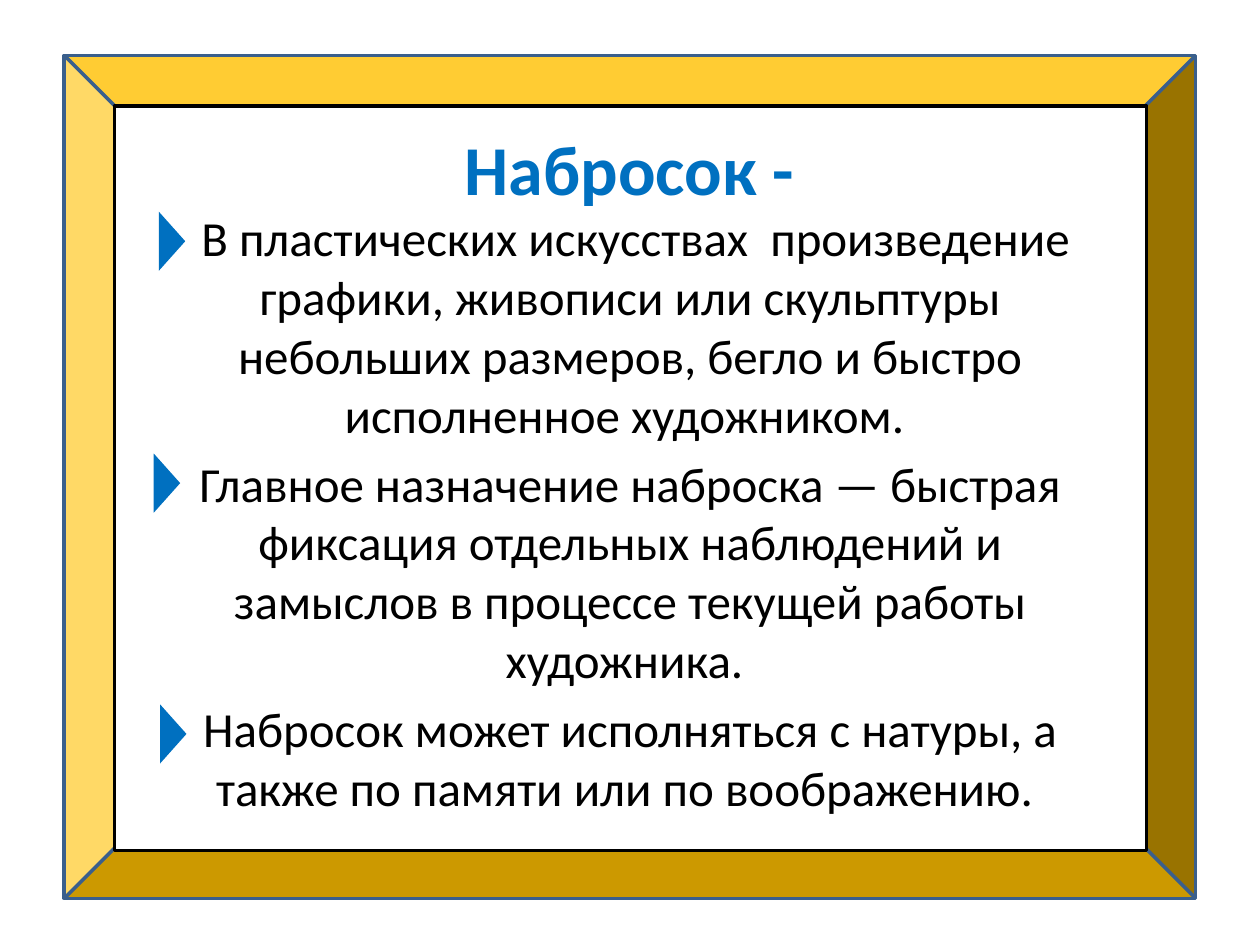
from dataclasses import dataclass

from pptx import Presentation
from pptx.dml.color import RGBColor as Rgb
from pptx.enum.shapes import MSO_SHAPE as Form
from pptx.enum.text import MSO_AUTO_SIZE as Fit, PP_ALIGN as Align
from pptx.util import Inches, Pt


@dataclass(frozen=True)
class Theme:
    font: str = "Calibri"
    gold: str = "FFC000"
    edge: str = "3A5F8C"
    paper: str = "FFFFFF"
    ink: str = "000000"
    blue: str = "0070C0"
    head: int = 40
    body: int = 28
    rule: int = 2


THEME = Theme()
WIDE, HIGH = Inches(10), Inches(7.5)
TITLE = "Набросок -"
POINTS = (
    " В пластических искусствах  произведение графики, живописи или скульптуры "
    "небольших размеров, бегло и быстро исполненное художником. ",
    "Главное назначение наброска — быстрая фиксация отдельных наблюдений и "
    "замыслов в процессе текущей работы художника. ",
    "Набросок может исполняться с натуры, а также по памяти или по воображению. ",
)
MARKS = ((11.3, 24.13), (10.9, 49.73), (11.4, 76.27))


def area(left, top, width, height):
    return [round(size * share / 100) for size, share in
            ((WIDE, left), (HIGH, top), (WIDE, width), (HIGH, height))]


def add_form(slide, kind, box, fill, line=None):
    form = slide.shapes.add_shape(kind, *area(*box))
    form.shadow.inherit = False
    form.fill.solid()
    form.fill.fore_color.rgb = Rgb.from_string(fill)
    if line:
        form.line.color.rgb = Rgb.from_string(line)
        form.line.width = Pt(THEME.rule)
    else:
        form.line.fill.background()
    return form


def add_run(para, text, size, color, bold=False):
    run = para.add_run()
    run.text = text
    font = run.font
    font.name, font.size, font.bold = THEME.font, Pt(size), bold
    font.color.rgb = Rgb.from_string(color)


def add_frame(slide):
    bevel = add_form(slide, Form.BEVEL, (5.1, 5.87, 89.8, 89.2),
                     THEME.gold, THEME.edge)
    bevel.adjustments[0] = 0.06
    add_form(slide, Form.RECTANGLE, (9.1, 11.2, 81.9, 78.8),
             THEME.paper, THEME.ink)


def add_body(slide):
    frame = slide.shapes.add_textbox(*area(11.2, 13.73, 77.6, 70.4)).text_frame
    frame.word_wrap = True
    frame.margin_top = Inches(0.62)
    for index, text in enumerate(POINTS):
        para = frame.add_paragraph() if index else frame.paragraphs[0]
        para.alignment = Align.CENTER
        para.space_before = Pt(THEME.body * 0.2 if index else 0)
        add_run(para, text, THEME.body, THEME.ink)


def add_marks(slide):
    for left, top in MARKS:
        mark = add_form(slide, Form.ISOSCELES_TRIANGLE,
                        (left, top, 4.7, 2.8), THEME.blue)
        mark.rotation = 90


def add_title(slide):
    frame = slide.shapes.add_textbox(*area(35.9, 12.67, 28.5, 10.27)).text_frame
    frame.word_wrap = False
    frame.auto_size = Fit.SHAPE_TO_FIT_TEXT
    add_run(frame.paragraphs[0], TITLE, THEME.head, THEME.blue, True)


def main():
    deck = Presentation()
    deck.slide_width, deck.slide_height = WIDE, HIGH
    slide = deck.slides.add_slide(deck.slide_layouts[6])
    add_frame(slide)
    add_body(slide)
    add_marks(slide)
    add_title(slide)
    deck.save("out.pptx")


if __name__ == "__main__":
    main()
